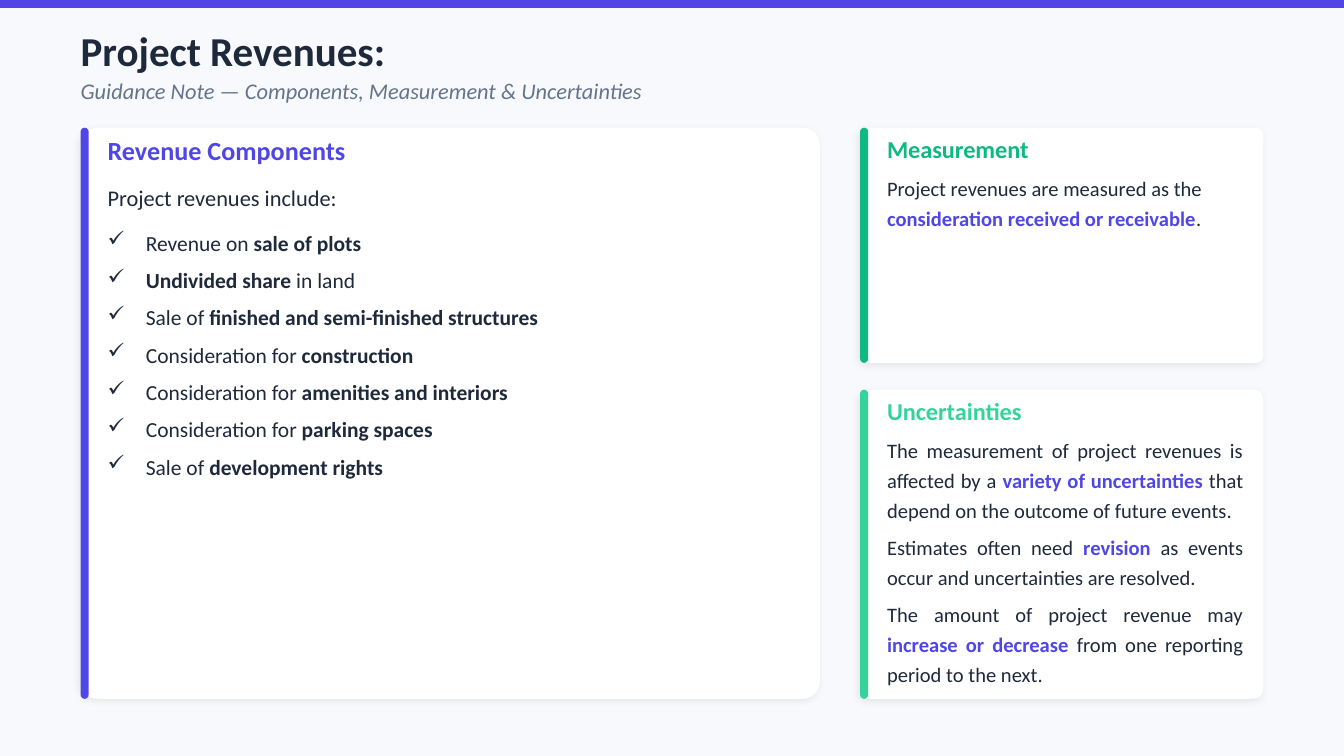
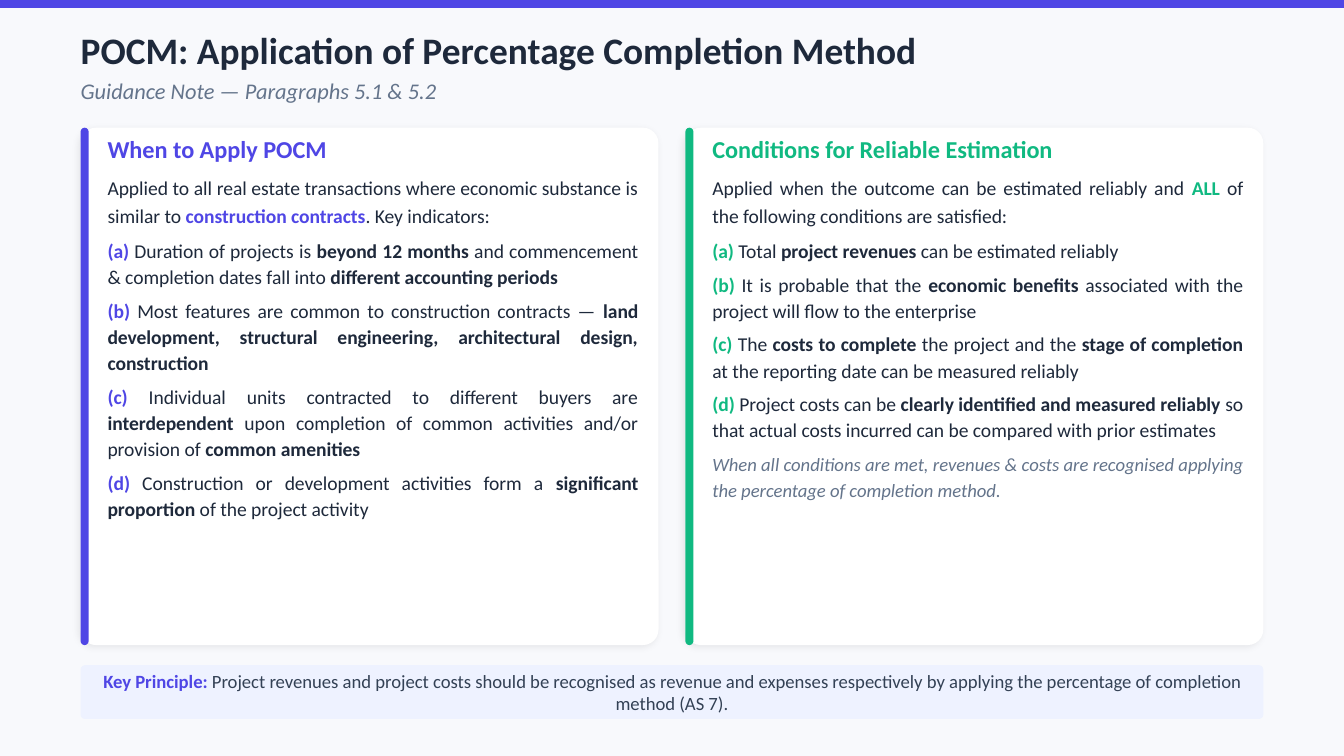
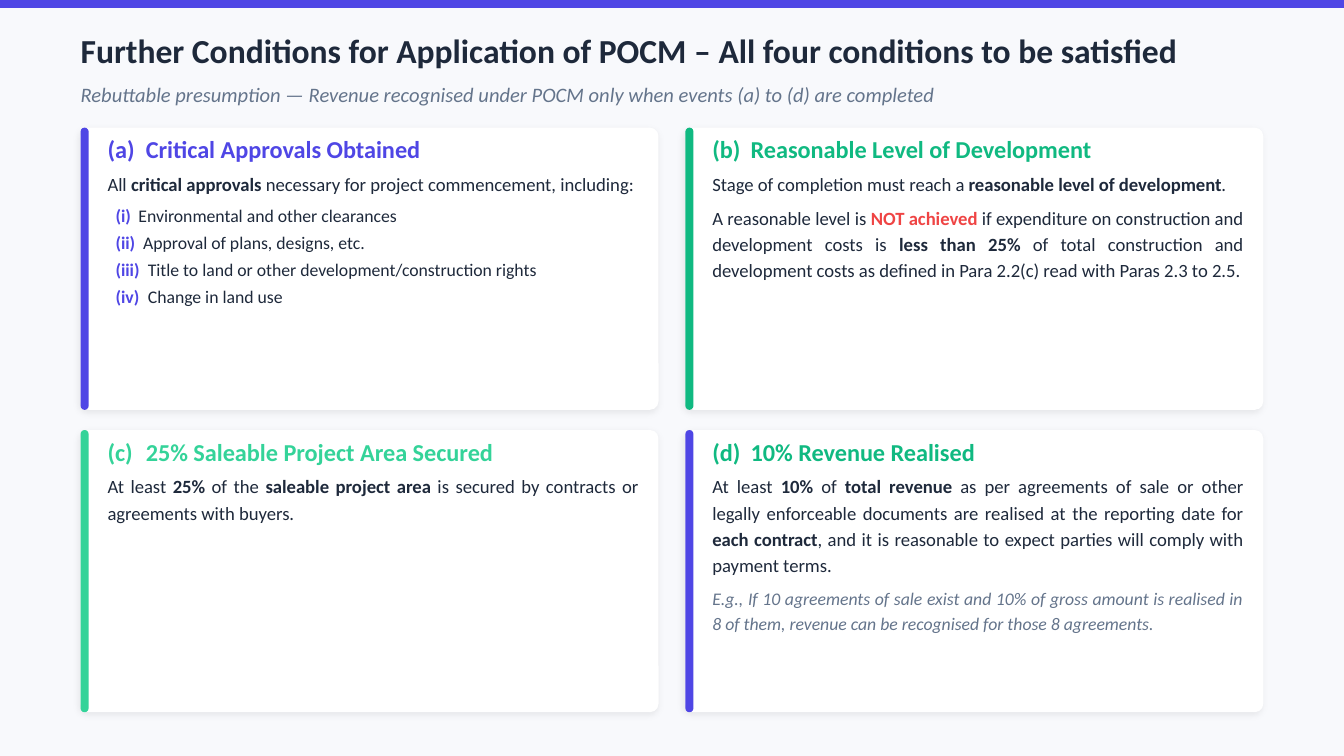
"""Build three slides on project revenues and the percentage completion method."""
from dataclasses import dataclass, replace

from lxml import etree
from pptx import Presentation
from pptx import util as u
from pptx.dml.color import RGBColor
from pptx.enum import shapes, text
from pptx.oxml.ns import qn

EMU_PER_PX = 4572
ALIGN = text.PP_ALIGN


@dataclass(frozen=True)
class Style:
    """Look of one paragraph: points for type, px for indents."""
    size: float
    color: str = "1E293B"
    leading: float = None
    after: float = 0
    bold: bool = False
    italic: bool = False
    start: int = 0
    margin: int = 0
    bullet: str = ""


@dataclass(frozen=True)
class Theme:
    """Colours and type sizes shared by the slides."""
    font: str = "Calibri"
    page: str = "F8F9FC"
    card: str = "FFFFFF"
    shadow: str = "000000"
    indigo: str = "4F46E5"
    green: str = "10B981"
    mint: str = "34D399"
    alert: str = "EF4444"
    principle_fill: str = "EEF2FF"
    title: Style = Style(22, bold=True)
    subtitle: Style = Style(12, "64748B", italic=True)
    main_heading: Style = Style(14, after=6, bold=True)
    heading: Style = Style(13, after=4, bold=True)
    lettered_heading: Style = Style(13, after=3, bold=True, margin=57)
    lead: Style = Style(12, leading=18, after=6)
    check: Style = Style(11.5, leading=18, after=2, margin=57, bullet="✓")
    note: Style = Style(11, leading=16, after=4)
    intro: Style = Style(10.5, leading=15, after=5)
    condition: Style = Style(10.5, leading=14, after=4)
    closing: Style = Style(10, "64748B", leading=14, italic=True)
    detail: Style = Style(10, leading=14, after=4)
    approval: Style = Style(9.5, leading=13.5, after=1, start=12)
    example: Style = Style(9.5, "64748B", leading=13.5, italic=True)
    principle: Style = Style(10, "334155")


T = Theme()


def px(length):
    """Turn px into EMU."""
    return u.Emu(length * EMU_PER_PX)


def rgb(color):
    """Turn a hex string into a colour."""
    return RGBColor.from_string(color)


def write(paragraph, markup, style, accent=T.indigo, align=ALIGN.LEFT):
    """Write text where *x* is bold, *@x* is bold accent and *!x* is bold alert."""
    paragraph.alignment = align
    paragraph.space_after = u.Pt(style.after)
    if style.leading:
        paragraph.line_spacing = u.Pt(style.leading)
    properties = paragraph._p.get_or_add_pPr()
    if style.margin:
        properties.set("marL", str(px(style.margin)))
        properties.set("indent", str(px(style.start - style.margin)))
    if style.bullet:
        etree.SubElement(properties, qn("a:buChar"), char=style.bullet)
    font = paragraph.font
    font.name, font.size = T.font, u.Pt(style.size)
    font.bold, font.italic = style.bold, style.italic
    font.color.rgb = rgb(style.color)
    for index, part in enumerate(markup.split("*")):
        if not part:
            continue
        run = paragraph.add_run()
        run.text = part.lstrip("@!")
        if index % 2:
            run.font.bold = True
            if part[0] in "@!":
                run.font.color.rgb = rgb(accent if part[0] == "@" else T.alert)


def set_frame(frame, anchor, across=0, down=0):
    """Wrap a text frame and set its anchor and insets."""
    frame.word_wrap = True
    frame.auto_size = text.MSO_AUTO_SIZE.NONE
    frame.vertical_anchor = anchor
    frame.margin_left = frame.margin_right = px(across)
    frame.margin_top = frame.margin_bottom = px(down)


def add_panel(slide, box, fill, radius=None):
    """Add a plain filled rectangle, rounded when a radius is given."""
    kind = shapes.MSO_SHAPE.RECTANGLE if radius is None else shapes.MSO_SHAPE.ROUNDED_RECTANGLE
    panel = slide.shapes.add_shape(kind, *map(px, box))
    if radius is not None:
        panel.adjustments[0] = radius
    panel.fill.solid()
    panel.fill.fore_color.rgb = rgb(fill)
    panel.line.fill.background()
    panel.shadow.inherit = False
    return panel


def add_soft_shadow(panel):
    """Give a panel a faint shadow to the lower left."""
    effects = panel._element.spPr.find(qn("a:effectLst"))
    outer = etree.SubElement(effects, qn("a:outerShdw"), blurRad=str(u.Pt(4)),
                             dist=str(u.Pt(1.5)), dir=str(135 * 60000),
                             algn="bl", rotWithShape="0")
    color = etree.SubElement(outer, qn("a:srgbClr"), val=T.shadow)
    etree.SubElement(color, qn("a:alpha"), val="8000")


def add_text(slide, box, entries, anchor=text.MSO_ANCHOR.TOP, accent=T.indigo, align=ALIGN.LEFT):
    """Add a text box with one paragraph for each (style, markup) entry."""
    frame = slide.shapes.add_textbox(*map(px, box)).text_frame
    set_frame(frame, anchor)
    for index, (style, markup) in enumerate(entries):
        paragraph = frame.add_paragraph() if index else frame.paragraphs[0]
        write(paragraph, markup, style, accent, align)


def add_card(slide, box, accent, heading, body, style=T.heading, heading_color=None,
             emphasis=None, align=ALIGN.JUSTIFY):
    """Add a white card with an accent bar, a heading and body paragraphs."""
    left, top, width, height = box
    add_soft_shadow(add_panel(slide, box, T.card, 0.03))
    add_panel(slide, (left, top, 12, height), accent, 0.5)
    colored = replace(style, color=heading_color or accent)
    add_text(slide, (left + 40, top + 10, width - 70, height - 20),
             [(colored, heading), *body], accent=emphasis or accent, align=align)


def add_page(deck, title, subtitle, title_size, subtitle_size=12, subtitle_height=50):
    """Add a slide with background, top band, title and subtitle."""
    slide = deck.slides.add_slide(deck.slide_layouts[5])
    slide.background.fill.solid()
    slide.background.fill.fore_color.rgb = rgb(T.page)
    add_panel(slide, (0, 0, 2000, 12), T.indigo)
    heading = slide.shapes.title
    heading.left, heading.top, heading.width, heading.height = map(px, (120, 30, 1760, 88))
    set_frame(heading.text_frame, text.MSO_ANCHOR.MIDDLE)
    write(heading.text_frame.paragraphs[0], title, replace(T.title, size=title_size))
    add_text(slide, (120, 110, 1760, subtitle_height),
             [(replace(T.subtitle, size=subtitle_size), subtitle)], text.MSO_ANCHOR.MIDDLE)
    return slide


def add_principle(slide, markup):
    """Add the centred key principle strip at the foot."""
    strip = add_panel(slide, (120, 990, 1760, 80), T.principle_fill, 0.08)
    set_frame(strip.text_frame, text.MSO_ANCHOR.MIDDLE, 30, 10)
    write(strip.text_frame.paragraphs[0], markup, T.principle, align=ALIGN.CENTER)


def build_revenues(deck):
    """Build the slide on revenue components, measurement and uncertainties."""
    slide = add_page(deck, "Project Revenues:",
                     "Guidance Note — Components, Measurement & Uncertainties", 22)
    components = [
        "Revenue on *sale of plots*",
        "*Undivided share* in land",
        "Sale of *finished and semi-finished structures*",
        "Consideration for *construction*",
        "Consideration for *amenities and interiors*",
        "Consideration for *parking spaces*",
        "Sale of *development rights*",
    ]
    add_card(slide, (120, 190, 1100, 850), T.indigo, "Revenue Components",
             [(T.lead, "Project revenues include:"), *((T.check, c) for c in components)],
             style=T.main_heading, align=ALIGN.LEFT)
    add_card(slide, (1280, 190, 600, 350), T.green, "Measurement",
             [(T.note, "Project revenues are measured as the "
                       "*@consideration received or receivable*.")],
             emphasis=T.indigo, align=ALIGN.LEFT)
    uncertainties = [
        "The measurement of project revenues is affected by a *@variety of uncertainties* "
        "that depend on the outcome of future events.",
        "Estimates often need *@revision* as events occur and uncertainties are resolved.",
        "The amount of project revenue may *@increase or decrease* "
        "from one reporting period to the next.",
    ]
    add_card(slide, (1280, 580, 600, 460), T.mint, "Uncertainties",
             [(T.note, u_text) for u_text in uncertainties], emphasis=T.indigo)


def build_application(deck):
    """Build the slide on when the method applies."""
    slide = add_page(deck, "POCM: Application of Percentage Completion Method",
                     "Guidance Note — Paragraphs 5.1 & 5.2", 20)
    indicators = [
        "*@(a)* Duration of projects is *beyond 12 months* and commencement & completion "
        "dates fall into *different accounting periods*",
        "*@(b)* Most features are common to construction contracts — *land development, "
        "structural engineering, architectural design, construction*",
        "*@(c)* Individual units contracted to different buyers are *interdependent* upon "
        "completion of common activities and/or provision of *common amenities*",
        "*@(d)* Construction or development activities form a *significant proportion* "
        "of the project activity",
    ]
    conditions = [
        "*@(a)* Total *project revenues* can be estimated reliably",
        "*@(b)* It is probable that the *economic benefits* associated with the project "
        "will flow to the enterprise",
        "*@(c)* The *costs to complete* the project and the *stage of completion* "
        "at the reporting date can be measured reliably",
        "*@(d)* Project costs can be *clearly identified and measured reliably* so that "
        "actual costs incurred can be compared with prior estimates",
    ]
    cards = [
        (T.indigo, "When to Apply POCM",
         "Applied to all real estate transactions where economic substance is similar to "
         "*@construction contracts*. Key indicators:", indicators, []),
        (T.green, "Conditions for Reliable Estimation",
         "Applied when the outcome can be estimated reliably and *@ALL* of the following "
         "conditions are satisfied:", conditions,
         [(T.closing, "When all conditions are met, revenues & costs are recognised "
                      "applying the percentage of completion method.")]),
    ]
    for column, (accent, heading, intro, points, closing) in enumerate(cards):
        body = [(T.intro, intro), *((T.condition, point) for point in points), *closing]
        add_card(slide, (120 + 900 * column, 190, 860, 770), accent, heading, body)
    add_principle(slide, "*@Key Principle:* Project revenues and project costs should be "
                         "recognised as revenue and expenses respectively by applying the "
                         "percentage of completion method (AS 7).")


def build_further_conditions(deck):
    """Build the slide with the four further conditions."""
    slide = add_page(
        deck, "Further Conditions for Application of POCM – All four conditions to be satisfied",
        "Rebuttable presumption — Revenue recognised under POCM only when events "
        "(a) to (d) are completed", 18, 11, 60)
    approvals = [
        (46, "*@(i)*\tEnvironmental and other clearances"),
        (53, "*@(ii)*\tApproval of plans, designs, etc."),
        (60, "*@(iii)*\tTitle to land or other development/construction rights"),
        (60, "*@(iv)*\tChange in land use"),
    ]
    conditions = [
        (T.indigo, T.indigo, ALIGN.LEFT, "(a)\tCritical Approvals Obtained",
         [(replace(T.detail, after=3),
           "All *critical approvals* necessary for project commencement, including:"),
          *((replace(T.approval, margin=margin), item) for margin, item in approvals)]),
        (T.green, T.green, ALIGN.JUSTIFY, "(b)\tReasonable Level of Development",
         [(T.detail, "Stage of completion must reach a *reasonable level of development*."),
          (T.detail, "A reasonable level is *!NOT achieved* if expenditure on construction "
                     "and development costs is *less than 25%* of total construction and "
                     "development costs as defined in Para 2.2(c) read with Paras 2.3 to 2.5.")]),
        (T.mint, T.mint, ALIGN.JUSTIFY, "(c)\t25% Saleable Project Area Secured",
         [(T.detail, "At least *25%* of the *saleable project area* is secured by contracts "
                     "or agreements with buyers.")]),
        (T.indigo, T.green, ALIGN.JUSTIFY, "(d)\t10% Revenue Realised",
         [(T.detail, "At least *10%* of *total revenue* as per agreements of sale or other "
                     "legally enforceable documents are realised at the reporting date for "
                     "*each contract*, and it is reasonable to expect parties will comply "
                     "with payment terms."),
          (T.example, "E.g., If 10 agreements of sale exist and 10% of gross amount is "
                      "realised in 8 of them, revenue can be recognised for those "
                      "8 agreements.")]),
    ]
    for index, (accent, heading_color, align, heading, body) in enumerate(conditions):
        row, column = divmod(index, 2)
        add_card(slide, (120 + 900 * column, 190 + 450 * row, 860, 420), accent, heading, body,
                 T.lettered_heading, heading_color, align=align)


def main():
    """Build and save the deck."""
    deck = Presentation()
    deck.slide_width, deck.slide_height = px(2000), px(1125)
    build_revenues(deck)
    build_application(deck)
    build_further_conditions(deck)
    deck.save("out.pptx")


if __name__ == "__main__":
    main()
